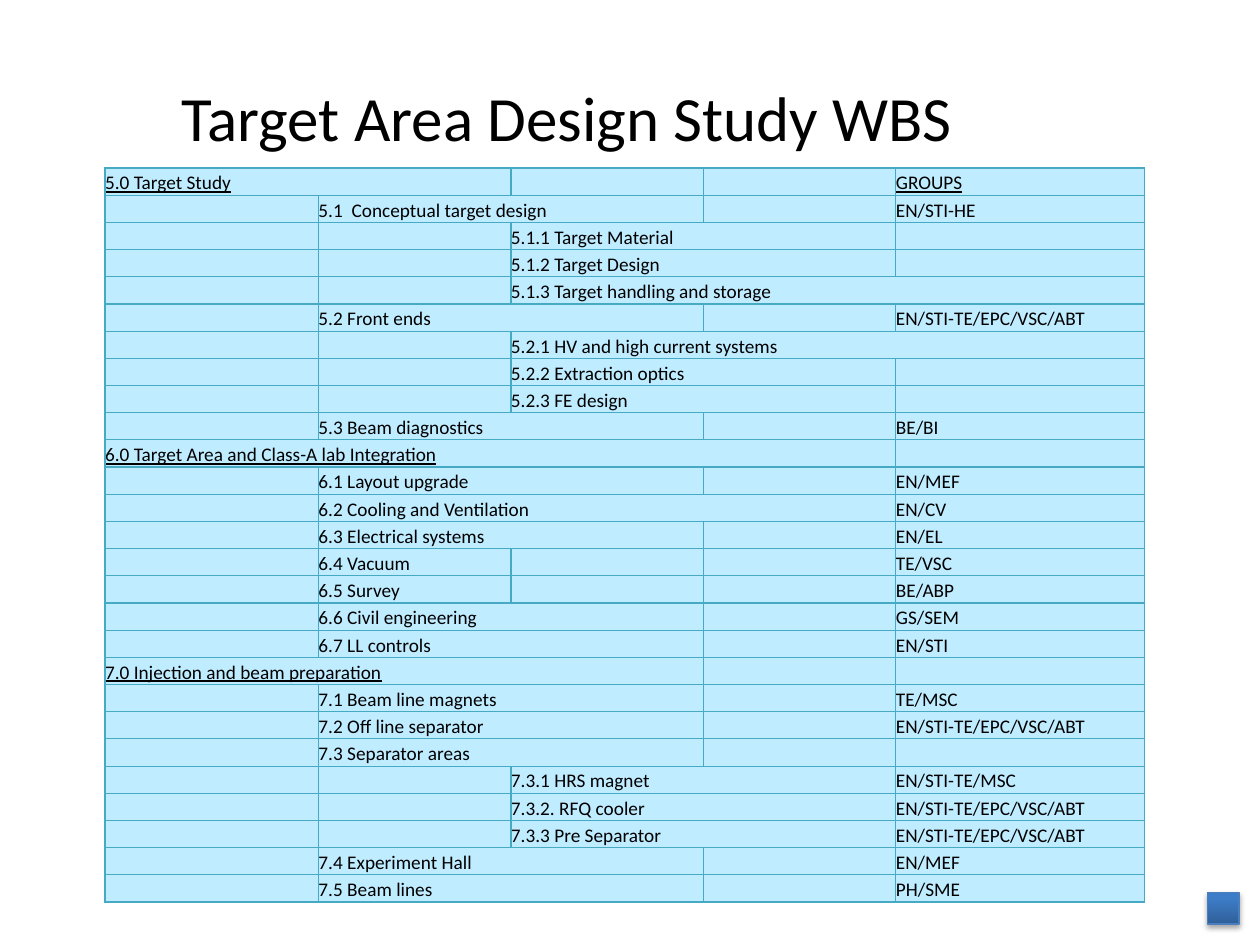
from dataclasses import dataclass

from lxml.etree import SubElement
from pptx import Presentation
from pptx.dml.color import RGBColor as RGB
from pptx.enum.shapes import MSO_SHAPE as SHAPE
from pptx.enum.text import MSO_ANCHOR as ANCHOR, PP_ALIGN as ALIGN
from pptx.oxml.ns import qn
from pptx.util import Pt


@dataclass(frozen=True)
class Theme:
    font: str = "Calibri"
    title_size: float = 36
    cell_size: float = 11
    text: str = "000000"
    cell: str = "BFECFF"
    border: str = "46AAC5"
    button_dark: str = "2F5F99"
    button_light: str = "3D7CC7"
    button_line: str = "4B7EBC"
    line_width: float = 0.75


THEME = Theme()
COLUMNS = [122, 110, 110, 110, 142]
TABLE_HEIGHT = 420

# Start column, columns spanned, work package, responsible groups
ALL_TECH = "EN/STI-TE/EPC/VSC/ABT"
PACKAGES = [
    (0, 2, "5.0 Target Study", "GROUPS"),
    (1, 2, "5.1  Conceptual target design", "EN/STI-HE"),
    (2, 2, "5.1.1 Target Material", ""),
    (2, 2, "5.1.2 Target Design", ""),
    (2, 3, "5.1.3 Target handling and storage", ""),
    (1, 2, "5.2 Front ends", ALL_TECH),
    (2, 3, "5.2.1 HV and high current systems", ""),
    (2, 2, "5.2.2 Extraction optics", ""),
    (2, 2, "5.2.3 FE design", ""),
    (1, 2, "5.3 Beam diagnostics", "BE/BI"),
    (0, 4, "6.0 Target Area and Class-A lab Integration", ""),
    (1, 2, "6.1 Layout upgrade", "EN/MEF"),
    (1, 3, "6.2 Cooling and Ventilation", "EN/CV"),
    (1, 2, "6.3 Electrical systems", "EN/EL"),
    (1, 1, "6.4 Vacuum", "TE/VSC"),
    (1, 1, "6.5 Survey", "BE/ABP"),
    (1, 2, "6.6 Civil engineering", "GS/SEM"),
    (1, 2, "6.7 LL controls", "EN/STI"),
    (0, 3, "7.0 Injection and beam preparation", ""),
    (1, 2, "7.1 Beam line magnets", "TE/MSC"),
    (1, 2, "7.2 Off line separator", ALL_TECH),
    (1, 2, "7.3 Separator areas", ""),
    (2, 2, "7.3.1 HRS magnet", "EN/STI-TE/MSC"),
    (2, 2, "7.3.2. RFQ cooler", ALL_TECH),
    (2, 2, "7.3.3 Pre Separator", ALL_TECH),
    (1, 2, "7.4 Experiment Hall", "EN/MEF"),
    (1, 2, "7.5 Beam lines", "PH/SME"),
]


def rgb(color):
    return RGB.from_string(color)


def write(tf, text, size, align=ALIGN.LEFT, underline=False):
    p = tf.paragraphs[0]
    p.alignment = align
    r = p.add_run()
    r.text = text
    r.font.name, r.font.size = THEME.font, Pt(size)
    r.font.color.rgb = rgb(THEME.text)
    r.font.underline = underline


def add_title(s, text):
    sp = s.shapes.title
    sp.left, sp.top, sp.width, sp.height = Pt(36), Pt(21.6), Pt(576), Pt(90)
    sp.text_frame.vertical_anchor = ANCHOR.MIDDLE
    write(sp.text_frame, text, THEME.title_size, align=ALIGN.CENTER)


def format_cell(cell):
    cell.margin_left = cell.margin_right = cell.margin_top = cell.margin_bottom = 0
    cell.vertical_anchor = ANCHOR.BOTTOM
    # Borders come before the fill in the cell properties
    tc_pr = cell._tc.get_or_add_tcPr()
    for side in ("lnL", "lnR", "lnT", "lnB"):
        ln = SubElement(tc_pr, qn(f"a:{side}"), w=str(Pt(THEME.line_width)))
        fill = SubElement(ln, qn("a:solidFill"))
        SubElement(fill, qn("a:srgbClr"), val=THEME.border)
    cell.fill.solid()
    cell.fill.fore_color.rgb = rgb(THEME.cell)


def fill_cell(cell, text, **fmt):
    if text:
        write(cell.text_frame, text, THEME.cell_size, **fmt)
    else:
        # Keeps empty cells from stretching the row
        p = cell.text_frame.paragraphs[0]
        SubElement(p._p, qn("a:endParaRPr"), sz=str(THEME.cell_size * 100))


def add_wbs_table(s, packages):
    table = s.shapes.add_table(len(packages), len(COLUMNS), Pt(60), Pt(96),
                               Pt(sum(COLUMNS)), Pt(TABLE_HEIGHT)).table
    table.first_row = table.horz_banding = False
    for column, width in zip(table.columns, COLUMNS):
        column.width = Pt(width)
    last = len(COLUMNS) - 1
    for i, (start, span, name, groups) in enumerate(packages):
        table.rows[i].height = Pt(TABLE_HEIGHT / len(packages))
        texts = {last: groups, start: name}
        for j in range(len(COLUMNS)):
            cell = table.cell(i, j)
            format_cell(cell)
            underline = start == 0 or i == 0
            fill_cell(cell, texts.get(j, ""), underline=underline)
        if span > 1:
            table.cell(i, start).merge(table.cell(i, start + span - 1))


def add_button(s):
    sp = s.shapes.add_shape(SHAPE.ACTION_BUTTON_CUSTOM, Pt(690), Pt(510), Pt(18), Pt(18))
    sp.fill.gradient()
    sp.fill.gradient_angle = 90
    stops = ((0, THEME.button_dark), (0.8, THEME.button_light))
    for stop, (position, color) in zip(sp.fill.gradient_stops, stops):
        stop.position = position
        stop.color.rgb = rgb(color)
    sp.line.color.rgb = rgb(THEME.button_line)
    sp.line.width = Pt(THEME.line_width)
    # Soft shadow straight below
    sp.shadow.inherit = False
    effects = sp._element.spPr.find(qn("a:effectLst"))
    shadow = SubElement(effects, qn("a:outerShdw"), blurRad=str(Pt(3.1)),
                        dist=str(Pt(1.8)), dir="5400000", rotWithShape="0")
    color = SubElement(shadow, qn("a:srgbClr"), val=THEME.text)
    SubElement(color, qn("a:alpha"), val="35000")


def main():
    prs = Presentation()
    prs.slide_width, prs.slide_height = Pt(720), Pt(540)
    s = prs.slides.add_slide(prs.slide_layouts[5])
    add_title(s, "Target Area Design Study WBS")
    add_wbs_table(s, PACKAGES)
    add_button(s)
    prs.save("out.pptx")


if __name__ == "__main__":
    main()
